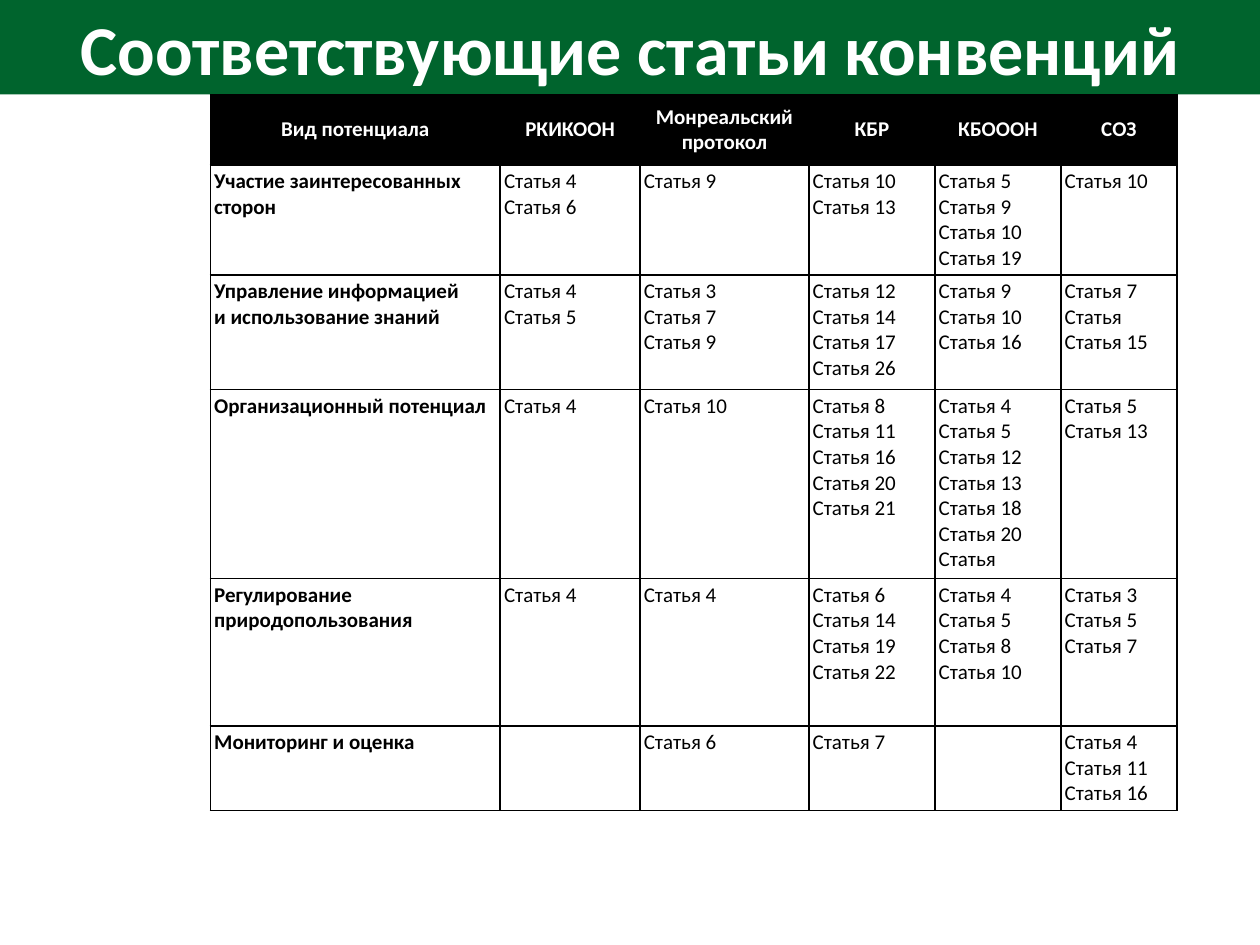
from dataclasses import dataclass

from lxml.etree import SubElement
from pptx import Presentation
from pptx.dml.color import RGBColor
from pptx.enum.text import MSO_ANCHOR, MSO_AUTO_SIZE, PP_ALIGN
from pptx.oxml.ns import qn
from pptx.util import Inches, Pt


@dataclass(frozen=True)
class Theme:
    font: str = "Calibri"
    green: RGBColor = RGBColor(0x00, 0x64, 0x2D)
    black: RGBColor = RGBColor(0, 0, 0)
    white: RGBColor = RGBColor(255, 255, 255)
    head: Pt = Pt(40)
    body: Pt = Pt(12)
    rule: Pt = Pt(1)


THEME = Theme()
TITLE = "Соответствующие статьи конвенций"
COLS = (2.3, 1.11, 1.34, 1, 1, 0.92)
ROWS = (0.56, 0.87, 0.91, 1.5, 1.17, 0.67)
HEADS = ("Вид потенциала", "РКИКООН", "Монреальский протокол",
         "КБР", "КБОООН", "СОЗ")
# Each row: kind of capacity, then the article numbers per convention.
BODY = (
    ("Участие заинтересованных сторон",
     (4, 6), (9,), (10, 13), (5, 9, 10, 19), (10,)),
    ("Управление информацией \nи использование знаний",
     (4, 5), (3, 7, 9), (12, 14, 17, 26), (9, 10, 16), (7, "Статья 15")),
    ("Организационный потенциал",
     (4,), (10,), (8, 11, 16, 20, 21), (4, 5, 12, 13, 18, 20, ""), (5, 13)),
    ("Регулирование природопользования",
     (4,), (4,), (6, 14, 19, 22), (4, 5, 8, 10), (3, 5, 7)),
    ("Мониторинг и оценка", (), (6,), (7,), (), (4, 11, 16)),
)


def add_run(para, text, size, color, bold):
    run = para.add_run()
    run.text = text
    font = run.font
    font.name, font.size, font.bold = THEME.font, size, bold
    font.color.rgb = color


def add_title(slide):
    title = slide.shapes.title
    title.left, title.top = 0, 0
    title.width, title.height = Inches(10), Inches(0.75)
    title.fill.solid()
    title.fill.fore_color.rgb = THEME.green
    frame = title.text_frame
    frame.auto_size = MSO_AUTO_SIZE.NONE
    frame.vertical_anchor = MSO_ANCHOR.MIDDLE
    para = frame.paragraphs[0]
    para.alignment = PP_ALIGN.CENTER
    add_run(para, TITLE, THEME.head, THEME.white, True)


def set_edges(cell):
    """Draw a solid rule on all four sides of the cell."""
    props = cell._tc.get_or_add_tcPr()
    for spot, side in enumerate("LRTB"):
        line = SubElement(props, qn(f"a:ln{side}"), w=str(int(THEME.rule)))
        fill = SubElement(line, qn("a:solidFill"))
        SubElement(fill, qn("a:srgbClr"), val=str(THEME.black))
        props.insert(spot, line)


def fill_cell(cell, texts, align, color=THEME.black, bold=False, inset=0.03):
    """Write one paragraph per text; a newline becomes a line break."""
    cell.margin_left = cell.margin_right = Inches(inset)
    cell.margin_top = cell.margin_bottom = Inches(inset)
    frame = cell.text_frame
    for spot, text in enumerate(texts):
        para = frame.add_paragraph() if spot else frame.paragraphs[0]
        para.alignment = align
        for part, line in enumerate(text.split("\n")):
            if part:
                para.add_line_break()
            add_run(para, line, THEME.body, color, bold)
    cell.fill.background()
    set_edges(cell)


def fill_head(cell, text):
    fill_cell(cell, [text], PP_ALIGN.CENTER, THEME.white, True, 0)
    cell.vertical_anchor = MSO_ANCHOR.MIDDLE
    cell.fill.solid()
    cell.fill.fore_color.rgb = THEME.black


def add_grid(slide):
    table = slide.shapes.add_table(
        len(ROWS), len(COLS), Inches(1.67), Inches(0.75),
        Inches(sum(COLS)), Inches(sum(ROWS))).table
    table.horz_banding = False
    for col, width in zip(table.columns, COLS):
        col.width = Inches(width)
    for row, height in zip(table.rows, ROWS):
        row.height = Inches(height)
    for col, text in enumerate(HEADS):
        fill_head(table.cell(0, col), text)
    for row, (kind, *groups) in enumerate(BODY, 1):
        fill_cell(table.cell(row, 0), [kind], PP_ALIGN.LEFT, bold=True)
        for col, group in enumerate(groups, 1):
            texts = [f"Статья {number}" for number in group]
            fill_cell(table.cell(row, col), texts, PP_ALIGN.JUSTIFY)


def main():
    deck = Presentation()
    deck.slide_width, deck.slide_height = Inches(10), Inches(7.5)
    slide = deck.slides.add_slide(deck.slide_layouts[5])
    add_title(slide)
    add_grid(slide)
    deck.save("out.pptx")


if __name__ == "__main__":
    main()
